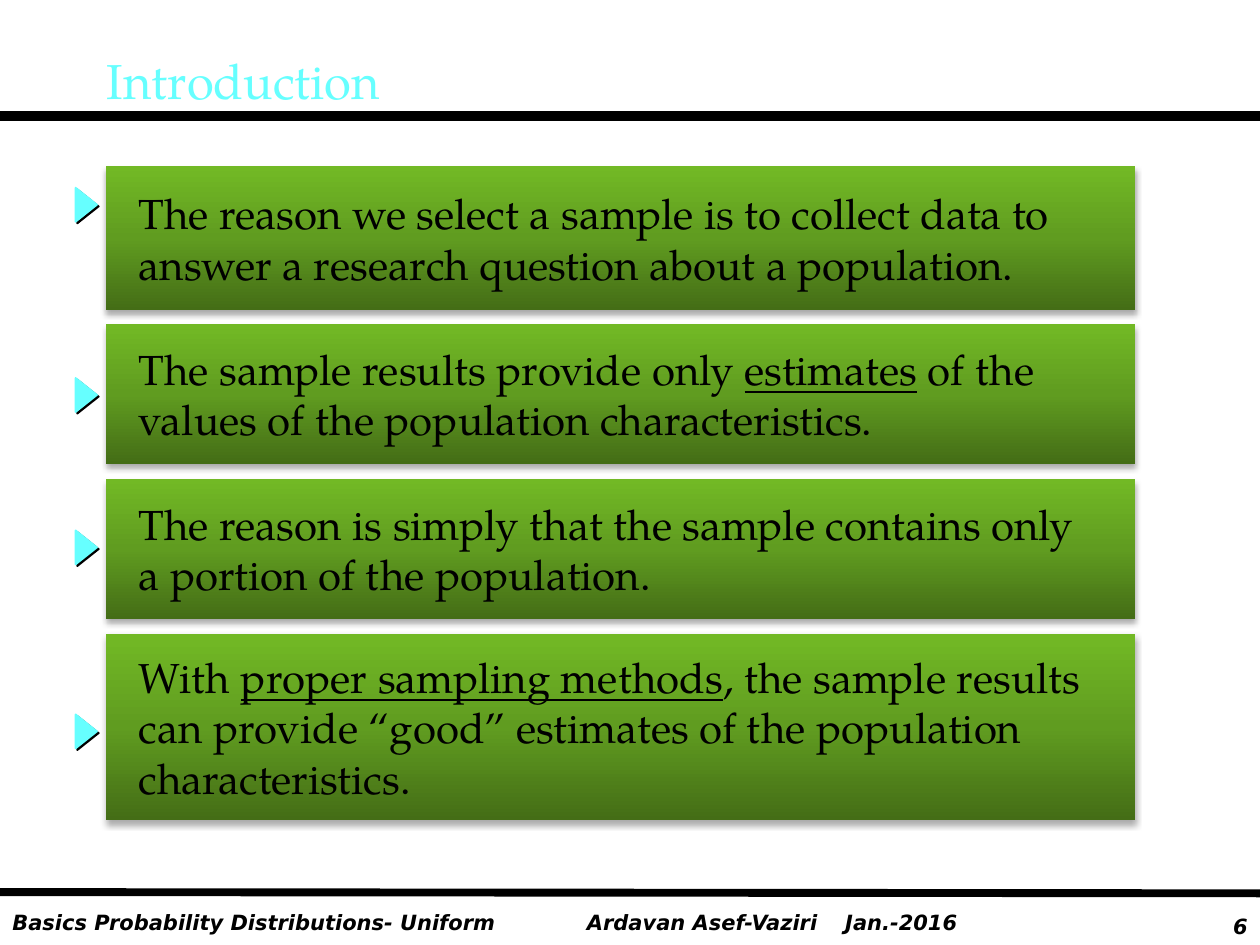
from lxml import etree
from pptx import Presentation
from pptx.dml.color import RGBColor
from pptx.enum import shapes, text
from pptx.oxml.ns import qn
from pptx.util import Inches, Pt

SERIF, SANS = "TeX Gyre Pagella", "DejaVu Sans"
BLACK, CYAN = "000000", "66FFFF"
GREENS = [(0, "446D16"), (50, "609C20"), (100, "72B925")]
BOX_LEFT, BOX_WIDTH = 0.84, 8.17
MARKER_LEFT, MARKER_WIDTH, MARKER_HEIGHT = 0.55, 0.27, 0.17

# top, height, marker top, lines; every second span of a line is underlined
STATEMENTS = [
    (1.32, 1.14, 1.54, [
        ["The reason we select a sample is to collect data to"],
        ["answer a research question about a population."]]),
    (2.57, 1.11, 3.05, [
        ["The sample results provide only ", "estimates", " of the"],
        ["values of the population characteristics."]]),
    (3.8, 1.11, 4.26, [
        ["The reason is simply that the sample contains only"],
        ["a portion of the population."]]),
    (5.03, 1.48, 5.72, [
        ["With ", "proper sampling methods", ", the sample results"],
        ["can provide “good” estimates of the population"],
        ["characteristics."]]),
]
# left, top, width, text, alignment
FOOTERS = [
    (0, 7.17, 4.67, "Basics Probability Distributions- Uniform", text.PP_ALIGN.LEFT),
    (4.56, 7.17, 3.35, "Ardavan Asef-Vaziri\tJan.-2016", text.PP_ALIGN.LEFT),
    (9.25, 7.2, 0.75, "6", text.PP_ALIGN.RIGHT),
]
# start height, end height, line width
RULES = [(0.92, 0.92, 6), (7.08, 7.09, 4.5)]
DATE_TAB = 2.05


def rgb(value):
    return RGBColor.from_string(value)


def add_child(parent, tag, **attributes):
    child = etree.SubElement(parent, qn(tag))
    for name, value in attributes.items():
        child.set(name, str(value))
    return child


def write(shape, lines, size, font=SERIF, color=BLACK, bold=False, italic=False,
          align=text.PP_ALIGN.LEFT, anchor=text.MSO_ANCHOR.MIDDLE, wrap=True, left=0.1):
    """Fill a shape with lines, each a list of spans."""
    frame = shape.text_frame
    frame.word_wrap = wrap
    frame.vertical_anchor = anchor
    frame.margin_left = Inches(left)
    for index, spans in enumerate(lines):
        para = frame.add_paragraph() if index else frame.paragraphs[0]
        para.alignment = align
        for number, words in enumerate(spans):
            span = para.add_run()
            span.text = words
            span.font.size, span.font.name = Pt(size), font
            span.font.color.rgb = rgb(color)
            span.font.bold, span.font.italic = bold, italic
            span.font.underline = number % 2 == 1
    return frame


def set_shadow(shape, alpha, blur, distance, angle):
    shape.shadow.inherit = False
    effects = shape._element.spPr.find(qn("a:effectLst"))
    shadow = add_child(effects, "a:outerShdw", blurRad=Pt(blur), dist=Pt(distance),
                       dir=angle * 60000, algn="ctr", rotWithShape=0)
    tint = add_child(shadow, "a:srgbClr", val=BLACK)
    add_child(tint, "a:alpha", val=alpha * 1000)


def set_gradient(shape, stops):
    """Run the stops from the bottom edge to the top."""
    shape.fill.gradient()
    shape.fill.gradient_angle = 90
    stop_list = shape._element.spPr.find(".//" + qn("a:gsLst"))
    for old_stop in list(stop_list):
        stop_list.remove(old_stop)
    for position, color in stops:
        stop = add_child(stop_list, "a:gs", pos=position * 1000)
        add_child(stop, "a:srgbClr", val=color)


def add_rule(slide, start, end, width):
    rule = slide.shapes.add_connector(shapes.MSO_CONNECTOR.STRAIGHT,
                                      0, Inches(start), Inches(10), Inches(end))
    rule.line.color.rgb = rgb(BLACK)
    rule.line.width = Pt(width)
    add_child(rule._element.spPr, "a:effectLst")


def add_statement(slide, top, height, marker_top, lines):
    box = slide.shapes.add_shape(shapes.MSO_SHAPE.RECTANGLE, Inches(BOX_LEFT), Inches(top),
                                 Inches(BOX_WIDTH), Inches(height))
    set_gradient(box, GREENS)
    box.line.fill.background()
    set_shadow(box, 32, 3.5, 2.2, 90)
    write(box, lines, 24, wrap=False, left=0.26)

    marker = slide.shapes.add_shape(
        shapes.MSO_SHAPE.ISOSCELES_TRIANGLE, Inches(MARKER_LEFT), Inches(marker_top),
        Inches(MARKER_WIDTH), Inches(MARKER_HEIGHT))
    marker.rotation = 90
    marker.fill.solid()
    marker.fill.fore_color.rgb = rgb(CYAN)
    marker.line.color.rgb = rgb(CYAN)
    marker.line.width = Pt(1)
    set_shadow(marker, 100, 0, 1.4, 45)


def main():
    deck = Presentation()
    deck.slide_width, deck.slide_height = Inches(10), Inches(7.5)
    slide = deck.slides.add_slide(deck.slide_layouts[6])

    for left, top, width, words, align in FOOTERS:
        footer = slide.shapes.add_textbox(Inches(left), Inches(top), Inches(width), Inches(0.3))
        frame = write(footer, [[words]], 12, font=SANS, bold=True, italic=True,
                      align=align, anchor=text.MSO_ANCHOR.TOP)
        if "\t" in words:
            tabs = add_child(frame.paragraphs[0]._p.get_or_add_pPr(), "a:tabLst")
            add_child(tabs, "a:tab", pos=Inches(DATE_TAB), algn="l")
    for rule in RULES:
        add_rule(slide, *rule)

    title = slide.shapes.add_textbox(Inches(0.75), Inches(0.34), Inches(8.5), Inches(0.58))
    write(title, [["Introduction"]], 28, color=CYAN)
    for statement in STATEMENTS:
        add_statement(slide, *statement)
    deck.save("out.pptx")


if __name__ == "__main__":
    main()
